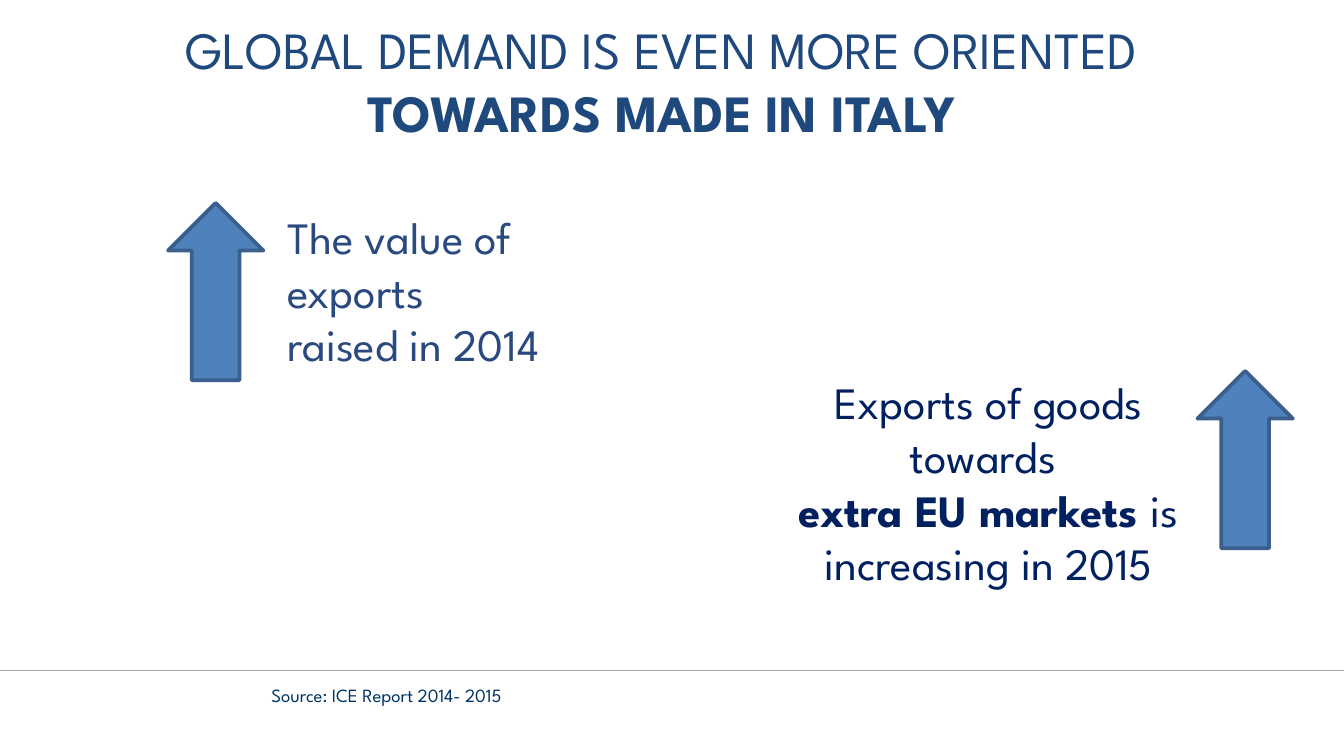
from lxml.etree import SubElement
from pptx import Presentation
from pptx.dml.color import RGBColor
from pptx.enum.shapes import MSO_CONNECTOR as Connector, MSO_SHAPE as Shape
from pptx.enum.text import MSO_AUTO_SIZE as AutoSize, PP_ALIGN as Align
from pptx.oxml.ns import qn
from pptx.util import Inches, Pt

COLUMNS, ROWS = 100, 56.25  # grid of tenths of an inch

presentation = Presentation()
presentation.slide_width = Inches(10)
presentation.slide_height = presentation.slide_width * 9 // 16
slide = presentation.slides.add_slide(presentation.slide_layouts[6])


def color(hex_value):
    return RGBColor.from_string(hex_value)


def grid(column, row):
    return (round(presentation.slide_width * column / COLUMNS),
            round(presentation.slide_height * row / ROWS))


# Footer rule
rule = slide.shapes.add_connector(Connector.STRAIGHT, *grid(0, 49.9), *grid(COLUMNS, 49.9))
rule.line.color.rgb = color("A6A6A6")
rule.line.width = Pt(0.75)
SubElement(rule._element.spPr, qn("a:effectLst"))

# Rising arrows
for column, row in [(89.1, 27.6), (12.5, 15.1)]:
    arrow = slide.shapes.add_shape(Shape.UP_ARROW, *grid(column, row), *grid(7.1, 13.2))
    arrow.shadow.inherit = False
    arrow.fill.solid()
    arrow.fill.fore_color.rgb = color("4F81BD")
    arrow.line.color.rgb = color("3A5F8C")
    arrow.line.width = Pt(2)

# Texts: position, size, wrap, alignment, points, colour, paragraphs of (text, bold) runs
texts = [
    ((19.2, 50.4), (21.9, 2.7), False, Align.LEFT, 10, "003366",
     [[("Source: ICE Report 2014- 2015", False)]]),
    ((56.6, 27.4), (33.9, 17.2), True, Align.CENTER, 24, "002060",
     [[("Exports of goods towards ", False)],
      [("extra EU markets ", True), ("is increasing in 2015", False)]]),
    ((20.4, 15.1), (70, 13.1), True, Align.LEFT, 24, "2A497E",
     [[("The value of", False)], [("exports", False)], [("raised in 2014", False)]]),
    ((5.4, 0.8), (87.6, 10.4), True, Align.CENTER, 28, "1F497D",
     [[("GLOBAL DEMAND IS EVEN MORE ORIENTED ", False), ("TOWARDS MADE IN ITALY", True)]]),
]
for position, size, wrap, alignment, points, hex_value, paragraphs in texts:
    frame = slide.shapes.add_textbox(*grid(*position), *grid(*size)).text_frame
    frame.word_wrap = wrap
    frame.auto_size = AutoSize.SHAPE_TO_FIT_TEXT
    for index, runs in enumerate(paragraphs):
        paragraph = frame.add_paragraph() if index else frame.paragraphs[0]
        paragraph.alignment = alignment
        for text, bold in runs:
            run = paragraph.add_run()
            run.text = text
            run.font.color.rgb = color(hex_value)
            font_format = {"name": "League Spartan", "size": Pt(points), "bold": bold}
            for attribute, value in font_format.items():
                setattr(run.font, attribute, value)

presentation.save("out.pptx")
